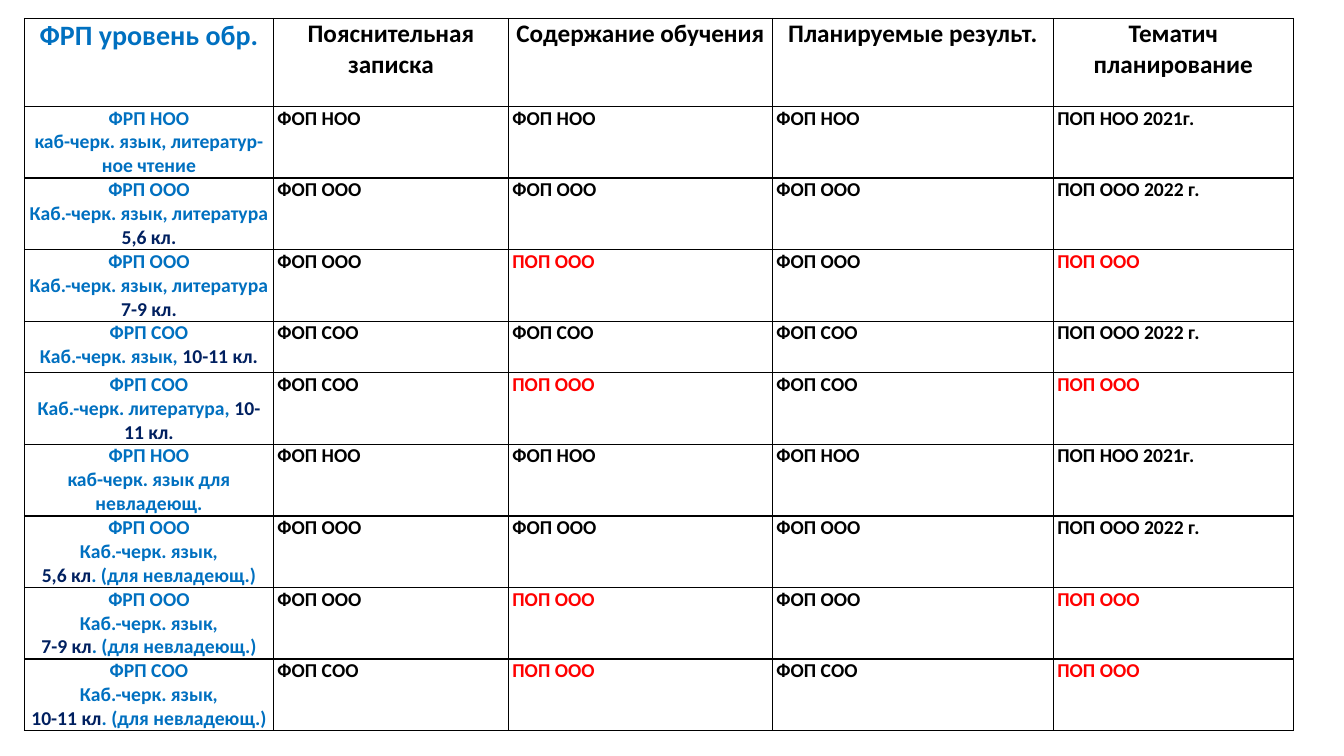
import pptx
import pptx.dml.color
import pptx.enum.text
import pptx.oxml
import pptx.oxml.ns
import pptx.util

SCALE = 914400 / 201.6
FONT = "Calibri"
COLORS = {"blue": "0070C0", "navy": "002060", "red": "FF0000",
          "black": "000000", "white": "FFFFFF"}
LEFT, TOP = 49, 37
WIDTHS = [498, 470, 528, 562, 480]
HEIGHTS = [176, 133, 133, 133, 103, 133, 133, 133, 133, 87]
HEADS = ["ФРП уровень обр.", "Пояснительная записка", "Содержание обучения",
         "Планируемые результ.", "Тематич планирование"]
DRAFT = "ПОП ООО"
LEVELS = [
    ("НОО", ["каб-черк. язык, литератур-ное чтение"], "ПОП НОО 2021г."),
    ("ООО", ["Каб.-черк. язык, литература", "|5,6 кл."], "ПОП ООО 2022 г."),
    ("ООО", ["Каб.-черк. язык, литература", "|7-9 кл."], DRAFT),
    ("СОО", ["Каб.-черк. язык, |10-11 кл."], "ПОП ООО 2022 г."),
    ("СОО", ["Каб.-черк. литература, |10-11 кл."], DRAFT),
    ("НОО", ["каб-черк. язык для невладеющ."], "ПОП НОО 2021г."),
    ("ООО", ["Каб.-черк. язык,", "|5,6 кл|. (для невладеющ.)"], "ПОП ООО 2022 г."),
    ("ООО", ["Каб.-черк. язык,", "|7-9 кл|. (для невладеющ.)"], DRAFT),
    ("СОО", ["Каб.-черк. язык,", "|10-11 кл|. (для невладеющ.)"], DRAFT),
]


def px(count):
    return pptx.util.Emu(round(count * SCALE))


def paint(font, color):
    font.color.rgb = pptx.dml.color.RGBColor.from_string(COLORS[color])


def border(cell):
    props = cell._tc.get_or_add_tcPr()
    for index, side in enumerate(("lnL", "lnR", "lnT", "lnB")):
        line = pptx.oxml.parse_xml(
            f'<a:{side} {pptx.oxml.ns.nsdecls("a")} w="12700"><a:solidFill>'
            f'<a:srgbClr val="{COLORS["black"]}"/></a:solidFill></a:{side}>')
        props.insert(index, line)


def write(para, text, size, color, center):
    para.font.name = FONT
    para.font.size = pptx.util.Pt(size)
    para.font.bold = True
    align = pptx.enum.text.PP_ALIGN
    para.alignment = align.CENTER if center else align.LEFT
    parts = [(part, "navy" if index % 2 else color)
             for index, part in enumerate(text.split("|")) if part]
    for part, tint in parts:
        run = para.add_run()
        run.text = part
        if len(parts) > 1:
            paint(run.font, tint)
    if len(parts) == 1:
        paint(para.font, parts[0][1])


def fill(cell, lines, size, color, center):
    cell.fill.solid()
    cell.fill.fore_color.rgb = pptx.dml.color.RGBColor.from_string(COLORS["white"])
    cell.margin_left = cell.margin_right = px(8)
    cell.margin_top = cell.margin_bottom = 0
    border(cell)
    frame = cell.text_frame
    for index, line in enumerate(lines):
        para = frame.add_paragraph() if index else frame.paragraphs[0]
        write(para, line, size, color, center)


def add_grid(slide):
    shape = slide.shapes.add_table(len(HEIGHTS), len(WIDTHS), px(LEFT), px(TOP),
                                   px(sum(WIDTHS)), px(sum(HEIGHTS)))
    table = shape.table
    for column, width in zip(table.columns, WIDTHS):
        column.width = px(width)
    for row, height in zip(table.rows, HEIGHTS):
        row.height = px(height)
    return table


def main():
    deck = pptx.Presentation()
    deck.slide_width, deck.slide_height = px(2688), px(1512)
    slide = deck.slides.add_slide(deck.slide_layouts[6])
    table = add_grid(slide)
    for col, head in enumerate(HEADS):
        size, color = (18, "black") if col else (20, "blue")
        fill(table.cell(0, col), [head], size, color, True)
    for row, (level, lines, plan) in enumerate(LEVELS, 1):
        fill(table.cell(row, 0), [f"ФРП {level}", *lines], 14, "blue", True)
        base = f"ФОП {level}"
        topic = DRAFT if plan == DRAFT else base
        for col, text in enumerate((base, topic, base, plan), 1):
            color = "red" if text == DRAFT else "black"
            fill(table.cell(row, col), [text], 14, color, False)
    deck.save("out.pptx")


if __name__ == "__main__":
    main()
